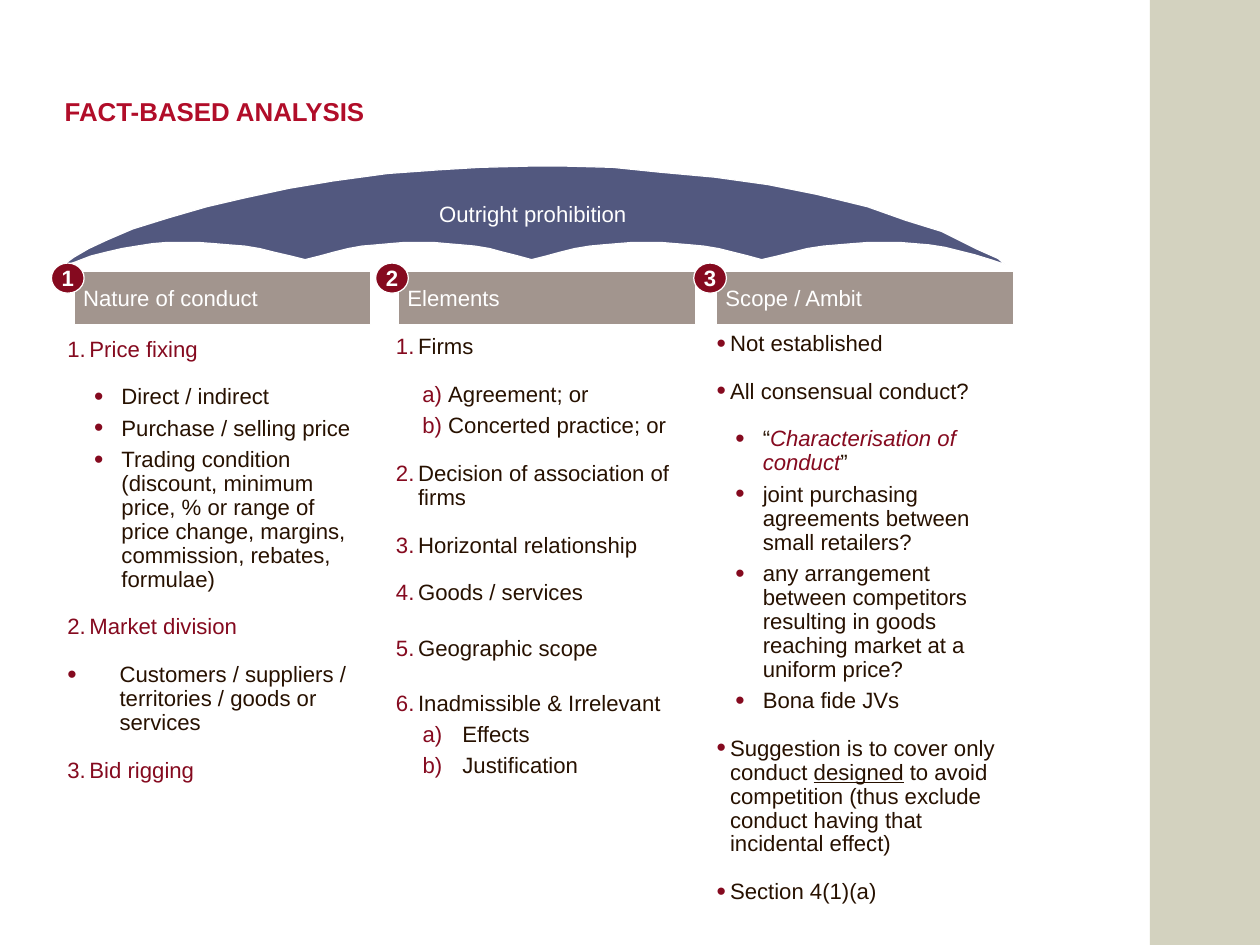
from lxml.etree import SubElement
from pptx import Presentation
from pptx.dml.color import RGBColor
from pptx.enum.shapes import MSO_SHAPE as Kind
from pptx.enum.text import MSO_ANCHOR as Anchor, PP_ALIGN as Align
from pptx.oxml.ns import qn
from pptx.util import Pt

WHITE = RGBColor(0xFF, 0xFF, 0xFF)
SAND = RGBColor(0xD3, 0xD2, 0xBF)
CRIMSON = RGBColor(0xB1, 0x0D, 0x29)
BLUE = RGBColor(0x52, 0x58, 0x7F)
TAUPE = RGBColor(0xA2, 0x95, 0x8E)
RED = RGBColor(0x85, 0x0A, 0x1F)
BROWN = RGBColor(0x27, 0x11, 0x00)
GAP = 19.4


def paint(shape, fill, width):
    shape.shadow.inherit = False
    shape.fill.solid()
    shape.fill.fore_color.rgb = fill
    if width:
        shape.line.color.rgb = WHITE
        shape.line.width = Pt(width)
    else:
        shape.line.fill.background()


def write(shape, text, size, color, bold=False, inset=(0, 0), wrap=True):
    """Fill the first paragraph of a shape and return it."""
    frame = shape.text_frame
    frame.word_wrap = wrap
    frame.margin_left = frame.margin_right = Pt(inset[0])
    frame.margin_top = frame.margin_bottom = Pt(inset[1])
    para = frame.paragraphs[0]
    para.text = text
    font = para.font
    font.name, font.size, font.bold = "Arial", Pt(size), bold
    font.color.rgb = color
    return para


deck = Presentation()
deck.slide_width, deck.slide_height = Pt(1024), Pt(768)
slide = deck.slides.add_slide(deck.slide_layouts[6])
shapes = slide.shapes

band = shapes.add_shape(Kind.RECTANGLE, Pt(934.5), 0, Pt(89.5), Pt(768))
paint(band, SAND, 0)

title = shapes.add_textbox(Pt(52.6), Pt(77.8), Pt(850), Pt(88))
para = write(title, "FACT-BASED ANALYSIS", 21, CRIMSON, True)
para.line_spacing = Pt(25.2)

# Umbrella: a domed top edge, then four scallops from right to left
dome = [
    (49, 217.4), (60.5, 208.8), (72, 202.3), (87.1, 195.1), (108, 186.5),
    (136.8, 177.1), (167.8, 167.8), (198, 160.6), (234.7, 152.6),
    (271.4, 146.9), (315.4, 141.1), (357.1, 137.5), (389.5, 136.1),
    (429.1, 134.6), (460.8, 135.4), (498.2, 136.1), (537.1, 139.7),
    (581, 144), (623.5, 150.5), (663.8, 158.4), (704.9, 168.5),
    (735.8, 178.6), (764.6, 187.9), (793.4, 201.6), (811.4, 210.2),
    (817.2, 215.3),
]
tips = [dome[-1], (619.2, 211), (432, 211), (248.4, 211), dome[0]]
crest = 196.6
edge = []
for (right, first), (left, last) in zip(tips, tips[1:]):
    for step in range(1, 17):
        turn = step / 8 - 1
        tip = first if turn < 0 else last
        edge.append((right + (left - right) * step / 16,
                     crest + (tip - crest) * turn ** 2))
pen = shapes.build_freeform(*dome[0], scale=Pt(1))
pen.add_line_segments(dome[1:] + edge, close=True)
paint(pen.convert_to_shape(), BLUE, 1)

label = shapes.add_textbox(Pt(258.5), Pt(162.7), Pt(349), Pt(21.6))
write(label, "Outright prohibition", 18, WHITE).alignment = Align.CENTER

# Heading, its left, badge left
heads = [("Nature of conduct", 60.5, 41.8), ("Elements", 324, 305.3),
         ("Scope / Ambit", 582.5, 563.8)]
for num, (name, left, spot) in enumerate(heads, 1):
    bar = shapes.add_shape(Kind.RECTANGLE, Pt(left), Pt(221), Pt(241), Pt(42.5))
    paint(bar, TAUPE, 0.75)
    write(bar, name, 18, WHITE, inset=(7.2, 3.6)).alignment = Align.LEFT
    badge = shapes.add_shape(Kind.OVAL, Pt(spot), Pt(213.8), Pt(26.6), Pt(24.5))
    paint(badge, RED, 1)
    para = write(badge, str(num), 18, WHITE, True, wrap=False)
    para.alignment = Align.CENTER
    for shape in (bar, badge):
        shape.text_frame.vertical_anchor = Anchor.MIDDLE

# Each item: mark, text, indent, hang, space before, space after
conduct = [
    (1, "Price fixing", 18, 18, 0, 0),
    ("•", "Direct / indirect", 44, 22.3, GAP, 6),
    ("•", "Purchase / selling price", 44, 22.3, 0, 6),
    ("•", "Trading condition (discount, minimum price, % or range of price "
     "change, margins, commission, rebates, formulae)", 44, 22.3, 0, 0),
    (2, "Market division", 18, 18, GAP, 0),
    ("•", "Customers / suppliers / territories / goods or services",
     42.5, 42.5, GAP, 0),
    (3, "Bid rigging", 18, 18, GAP, 0),
]
elements = [
    (1, "Firms", 18, 18, 0, 0),
    ("a", "Agreement; or", 42.5, 21, GAP, 6),
    ("a", "Concerted practice; or", 42.5, 21, 0, 0),
    (2, "Decision of association of firms", 18, 18, GAP, 0),
    (3, "Horizontal relationship", 18, 18, GAP, 0),
    (4, "Goods / services", 18, 18, GAP, 6),
    (5, "Geographic scope", 18, 18, GAP, 6),
    (6, "Inadmissible & Irrelevant", 18, 18, GAP, 6),
    ("a", "Effects", 54, 32.4, 0, 6),
    ("a", "Justification", 54, 32.4, 0, 0),
]
scope = [
    ("•", "Not established", 10.8, 10.8, 0, 0),
    ("•", "All consensual conduct?", 10.8, 10.8, GAP, 0),
    ("•", ("“", "Characterisation of conduct", "”"), 37.4, 22.3, GAP, 6),
    ("•", "joint purchasing agreements between small retailers?",
     37.4, 22.3, 0, 6),
    ("•", "any arrangement between competitors resulting in goods reaching "
     "market at a uniform price?", 37.4, 22.3, 0, 6),
    ("•", "Bona fide JVs", 37.4, 22.3, 0, 0),
    ("•", ("Suggestion is to cover only conduct ", "designed",
           " to avoid competition (thus exclude conduct having that "
           "incidental effect)"), 10.8, 10.8, GAP, 0),
    ("•", "Section 4(1)(a)", 10.8, 10.8, GAP, 0),
]
# Items, left, top, bottom, colour of numbered items
lists = [(conduct, 54.7, 270.7, 636.4, RED),
         (elements, 321.8, 268.6, 632.9, BROWN),
         (scope, 582.5, 265.7, 735.1, BROWN)]
for items, left, top, base, tint in lists:
    box = shapes.add_textbox(Pt(left), Pt(top), Pt(240.8), Pt(base - top))
    frame = box.text_frame
    frame.word_wrap = True
    frame.vertical_anchor = Anchor.BOTTOM
    frame.margin_left = frame.margin_right = 0
    frame.margin_top = frame.margin_bottom = 0
    for row, (mark, text, indent, hang, before, after) in enumerate(items):
        para = frame.add_paragraph() if row else frame.paragraphs[0]
        props = para._p.get_or_add_pPr()
        props.set("marL", str(Pt(indent)))
        props.set("indent", str(-Pt(hang)))
        hue = SubElement(props, qn("a:buClr"))
        SubElement(hue, qn("a:srgbClr"), val=str(RED))
        if mark == "•":
            SubElement(props, qn("a:buSzPct"), val="120000")
        SubElement(props, qn("a:buFont"), typeface="Arial")
        if mark == "•":
            SubElement(props, qn("a:buChar"), char=mark)
        elif mark == "a":
            para.level = 1
            SubElement(props, qn("a:buAutoNum"), type="alphaLcParenR")
        else:
            SubElement(props, qn("a:buAutoNum"), type="arabicPeriod",
                       startAt=str(mark))
        para.line_spacing = 0.9
        para.space_before, para.space_after = Pt(before), Pt(after)
        font = para.font
        font.name, font.size = "Arial", Pt(18)
        font.color.rgb = tint if isinstance(mark, int) else BROWN
        for part in [text] if isinstance(text, str) else text:
            run = para.add_run()
            run.text = part
            if part == "designed":
                run.font.underline = True
            elif part.startswith("Characterisation"):
                run.font.italic = True
                run.font.color.rgb = RED

deck.save("out.pptx")
